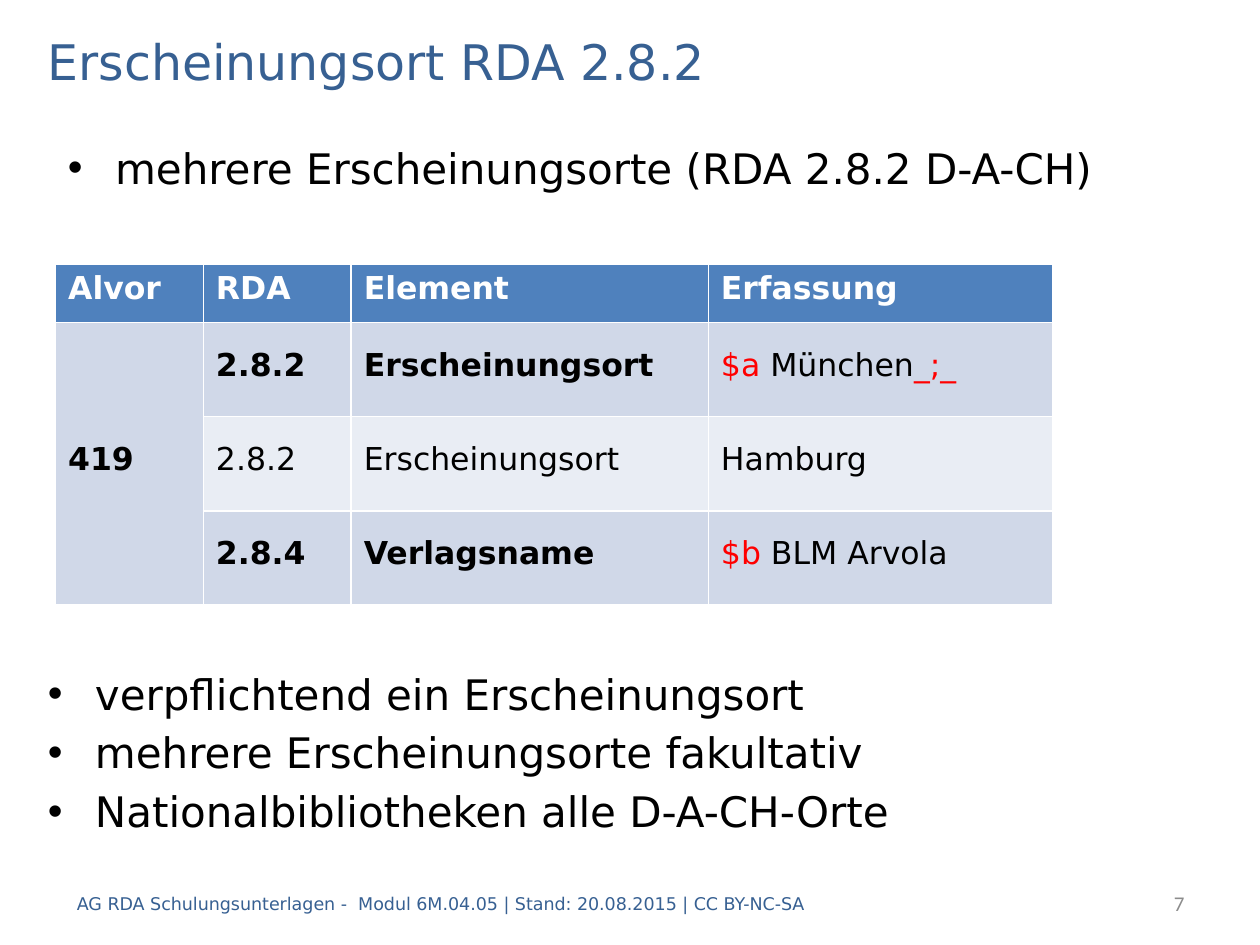
from lxml import etree
from pptx import Presentation
from pptx import util as u
from pptx.dml.color import RGBColor
from pptx.enum import text
from pptx.oxml.ns import qn

COLORS = {
    "heading": "376092",
    "body": "000000",
    "marker": "FF0000",
    "number": "8C8C8C",
    "header_text": "FFFFFF",
    "header": "4F81BD",
    "band_dark": "D0D8E8",
    "band_light": "E9EDF4",
}
FONT = "DejaVu Sans"


def color(name):
    return RGBColor.from_string(COLORS[name])


class SlideBuilder:
    """Holds the style and the current slide."""

    def __init__(self, slide):
        self.slide = slide

    def place(self, shape, box):
        shape.left, shape.top, shape.width, shape.height = map(u.Cm, box)

    def style(self, paragraph, size, color_name, bold=None, font=FONT):
        paragraph.font.name = font
        paragraph.font.size = u.Pt(size)
        paragraph.font.bold = bold
        paragraph.font.color.rgb = color(color_name)

    def title(self, box, words):
        heading = self.slide.shapes.title
        self.place(heading, box)
        heading.text_frame.text = words
        line = heading.text_frame.paragraphs[0]
        line.alignment = text.PP_ALIGN.LEFT
        self.style(line, 28, "heading")

    def textbox(self, box):
        shape = self.slide.shapes.add_textbox(*map(u.Cm, box))
        shape.text_frame.word_wrap = True
        return shape

    def bullets(self, shape, items):
        frame = shape.text_frame
        frame.auto_size = text.MSO_AUTO_SIZE.NONE
        frame.text = "\n".join(items)
        for line in frame.paragraphs:
            self.style(line, 24, "body")
            line.space_before = u.Pt(4.8)
            props = line._p.get_or_add_pPr()
            props.set("marL", str(u.Cm(0.95)))
            props.set("indent", str(-u.Cm(0.95)))
            # Bullet elements belong before the default run properties
            default_run = props.find(qn("a:defRPr"))
            bullet_font = etree.Element(qn("a:buFont"), typeface="Arial")
            bullet = etree.Element(qn("a:buChar"), char="•")
            default_run.addprevious(bullet_font)
            default_run.addprevious(bullet)

    def caption(self, box, words, size, color_name, font=FONT, align=text.PP_ALIGN.LEFT):
        frame = self.textbox(box).text_frame
        frame.vertical_anchor = text.MSO_ANCHOR.MIDDLE
        frame.text = words
        frame.paragraphs[0].alignment = align
        self.style(frame.paragraphs[0], size, color_name, font=font)

    def cell(self, cell, runs, fill, color_name, bold):
        cell.fill.solid()
        cell.fill.fore_color.rgb = color(fill)
        line = cell.text_frame.paragraphs[0]
        self.style(line, 18, color_name, bold)
        for words, run_color in runs:
            run = line.add_run()
            run.text = words
            # Explicit values override the table style
            run.font.bold = bold
            run.font.color.rgb = color(run_color or color_name)
        return line

    def table(self, box, widths, heights, header, rows):
        grid = self.slide.shapes.add_table(
            len(heights), len(widths), *map(u.Cm, box)).table
        for column, width in zip(grid.columns, widths):
            column.width = u.Cm(width)
        for row, height in zip(grid.rows, heights):
            row.height = u.Cm(height)
        for c, words in enumerate(header):
            self.cell(grid.cell(0, c), [(words, None)], "header", "header_text", True)
        for r, row in enumerate(rows, start=1):
            for c, (runs, bold) in enumerate(row):
                fill = "band_dark" if r % 2 or c == 0 else "band_light"
                cell = grid.cell(r, c)
                cell.vertical_anchor = text.MSO_ANCHOR.MIDDLE
                line = self.cell(cell, runs, fill, "body", bold)
                line.line_spacing = u.Pt(16)
                line.space_before = line.space_after = u.Pt(6)
        grid.cell(1, 0).merge(grid.cell(len(rows), 0))


def plain(words, bold=False):
    return [(words, None)], bold


def main():
    prs = Presentation()
    prs.slide_width, prs.slide_height = u.Cm(25.4), u.Cm(19.05)
    builder = SlideBuilder(prs.slides.add_slide(prs.slide_layouts[1]))

    # Title and closing list
    builder.title((0.71, 0.51, 24, 1.42), "Erscheinungsort RDA 2.8.2")
    rules = builder.slide.placeholders[1]
    builder.place(rules, (0.71, 13.34, 24, 3.4))
    builder.bullets(rules, [
        "verpflichtend ein Erscheinungsort",
        "mehrere Erscheinungsorte fakultativ",
        "Nationalbibliotheken alle D-A-CH-Orte",
    ])

    # Footer and slide number
    builder.caption(
        (1.3, 17.7, 21.2, 1.02),
        "AG RDA Schulungsunterlagen -  Modul 6M.04.05 | Stand: 20.08.2015 | CC BY-NC-SA",
        10, "heading")
    builder.caption((20.1, 17.7, 4.03, 1.02), "7", 12, "number",
                    font="Calibri", align=text.PP_ALIGN.RIGHT)

    # Topic
    topic = builder.textbox((1.12, 2.74, 24, 1.8))
    builder.bullets(topic, ["mehrere Erscheinungsorte (RDA 2.8.2 D-A-CH)"])

    # Cataloguing example
    place = [("$a", "marker"), (" München", None), ("_;_", "marker")]
    publisher = [("$b", "marker"), (" BLM Arvola", None)]
    builder.table(
        (1.12, 5.33, 20.1, 6.87),
        widths=[2.98, 2.98, 7.2, 6.94],
        heights=[1.17] + [1.9] * 3,
        header=["Alvor", "RDA", "Element", "Erfassung"],
        rows=[
            [plain("419", True), plain("2.8.2", True),
             plain("Erscheinungsort", True), (place, False)],
            [([], False), plain("2.8.2"), plain("Erscheinungsort"), plain("Hamburg")],
            [([], False), plain("2.8.4", True),
             plain("Verlagsname", True), (publisher, False)],
        ])

    prs.save("out.pptx")


if __name__ == "__main__":
    main()
